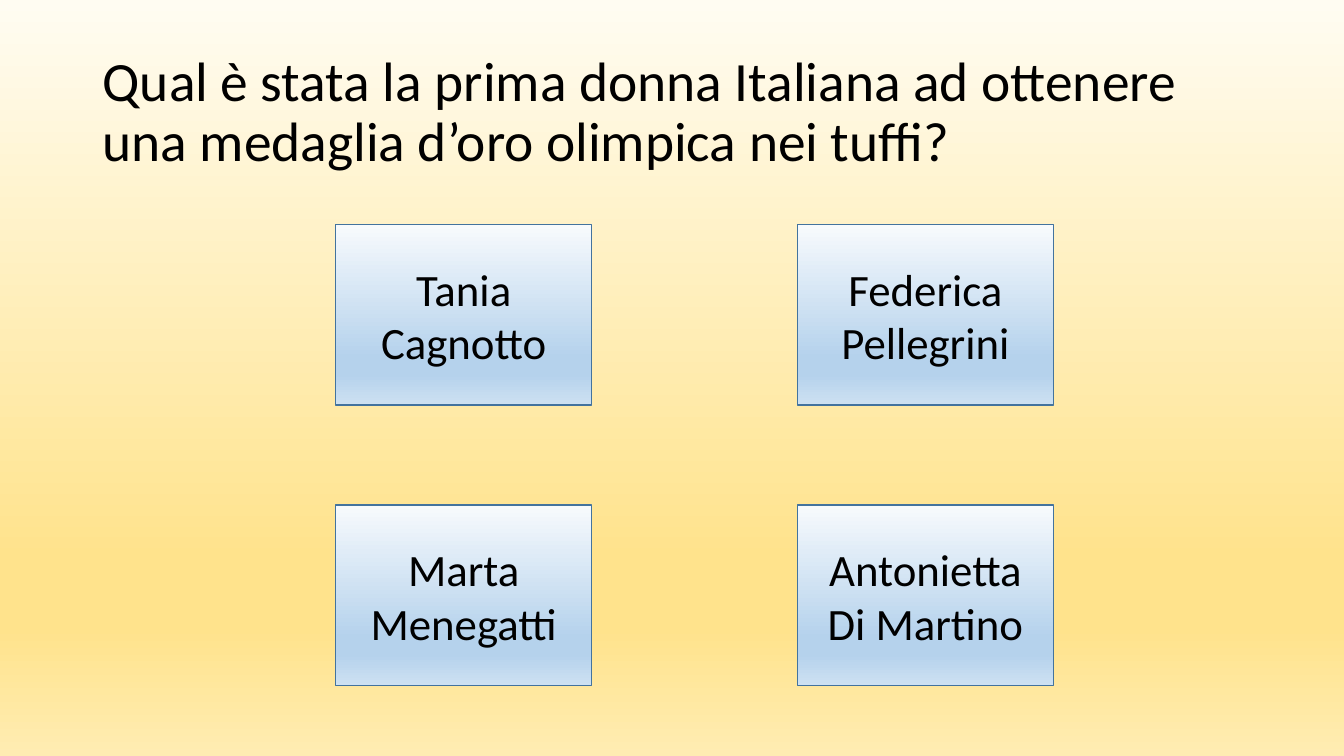
from dataclasses import dataclass

from lxml.etree import SubElement
from pptx import Presentation
from pptx.dml.color import RGBColor
from pptx.dml.fill import FillFormat
from pptx.enum.shapes import MSO_SHAPE
from pptx.enum.text import MSO_ANCHOR as Anchor, PP_ALIGN as Align
from pptx.oxml.ns import qn
from pptx.oxml.xmlchemy import BaseOxmlElement as Element
from pptx.slide import Slide
from pptx.text.text import TextFrame
from pptx.util import Inches, Pt

FONT = "Calibri"
TEXT_COLOR = "000000"
BORDER_COLOR = "43739E"
STOP_POSITIONS = (0, 74, 83, 100)
YELLOW_STOPS = ("FFFCF2", "FFE38C", "FFE38C", "FFECB2")
BLUE_STOPS = ("F7FAFD", "B5D2EC", "B5D2EC", "CEE1F2")

# Answer grid, in inches
GRID_LEFT, GRID_TOP = 3.33, 2.23
COLUMN_STEP, ROW_STEP = 4.58, 2.78
BOX_WIDTH, BOX_HEIGHT = 2.54, 1.79


@dataclass(frozen=True)
class Answer:
    name: str
    column: int
    row: int


ANSWERS = (
    Answer("Tania Cagnotto", 0, 0),
    Answer("Federica Pellegrini", 1, 0),
    Answer("Marta Menegatti", 0, 1),
    Answer("Antonietta Di Martino", 1, 1),
)


def color(value: str) -> RGBColor:
    return RGBColor.from_string(value)


def fill_gradient(fill: FillFormat, owner: Element, colors: tuple[str, ...]) -> None:
    """Fill from top to bottom with the shared stop positions."""
    fill.gradient()
    fill.gradient_angle = 270
    stop_list = next(owner.iter(qn("a:gsLst")))
    stop_list.clear()
    for position, value in zip(STOP_POSITIONS, colors):
        stop = SubElement(stop_list, qn("a:gs"), pos=str(position * 1000))
        SubElement(stop, qn("a:srgbClr"), val=value)


def write_text(text_frame: TextFrame, text: str, size: float, align: Align,
               line_spacing: float = 1.0) -> None:
    text_frame.text = text
    text_frame.word_wrap = True
    text_frame.vertical_anchor = Anchor.MIDDLE
    paragraph = text_frame.paragraphs[0]
    paragraph.alignment = align
    paragraph.line_spacing = line_spacing
    font = paragraph.runs[0].font
    font.name = FONT
    font.size = Pt(size)
    font.color.rgb = color(TEXT_COLOR)


def add_question(slide: Slide, text: str) -> None:
    box = slide.shapes.add_textbox(Inches(0.92), Inches(0.4), Inches(11.5), Inches(1.45))
    write_text(box.text_frame, text, 39.6, Align.LEFT, line_spacing=0.9)


def add_answer(slide: Slide, answer: Answer) -> None:
    shape = slide.shapes.add_shape(
        MSO_SHAPE.RECTANGLE,
        Inches(GRID_LEFT + answer.column * COLUMN_STEP),
        Inches(GRID_TOP + answer.row * ROW_STEP),
        Inches(BOX_WIDTH),
        Inches(BOX_HEIGHT),
    )
    shape.shadow.inherit = False
    fill_gradient(shape.fill, shape.element, BLUE_STOPS)
    shape.line.color.rgb = color(BORDER_COLOR)
    shape.line.width = Pt(1)
    write_text(shape.text_frame, answer.name, 32, Align.CENTER)


def main() -> None:
    presentation = Presentation()
    presentation.slide_width = Inches(13.33)
    presentation.slide_height = Inches(7.5)
    slide = presentation.slides.add_slide(presentation.slide_layouts[6])

    # Background
    fill_gradient(slide.background.fill, slide.element, YELLOW_STOPS)

    # Question and its four answers
    add_question(
        slide,
        "Qual è stata la prima donna Italiana ad ottenere una medaglia d’oro olimpica nei tuffi?",
    )
    for answer in ANSWERS:
        add_answer(slide, answer)

    presentation.save("out.pptx")


if __name__ == "__main__":
    main()
